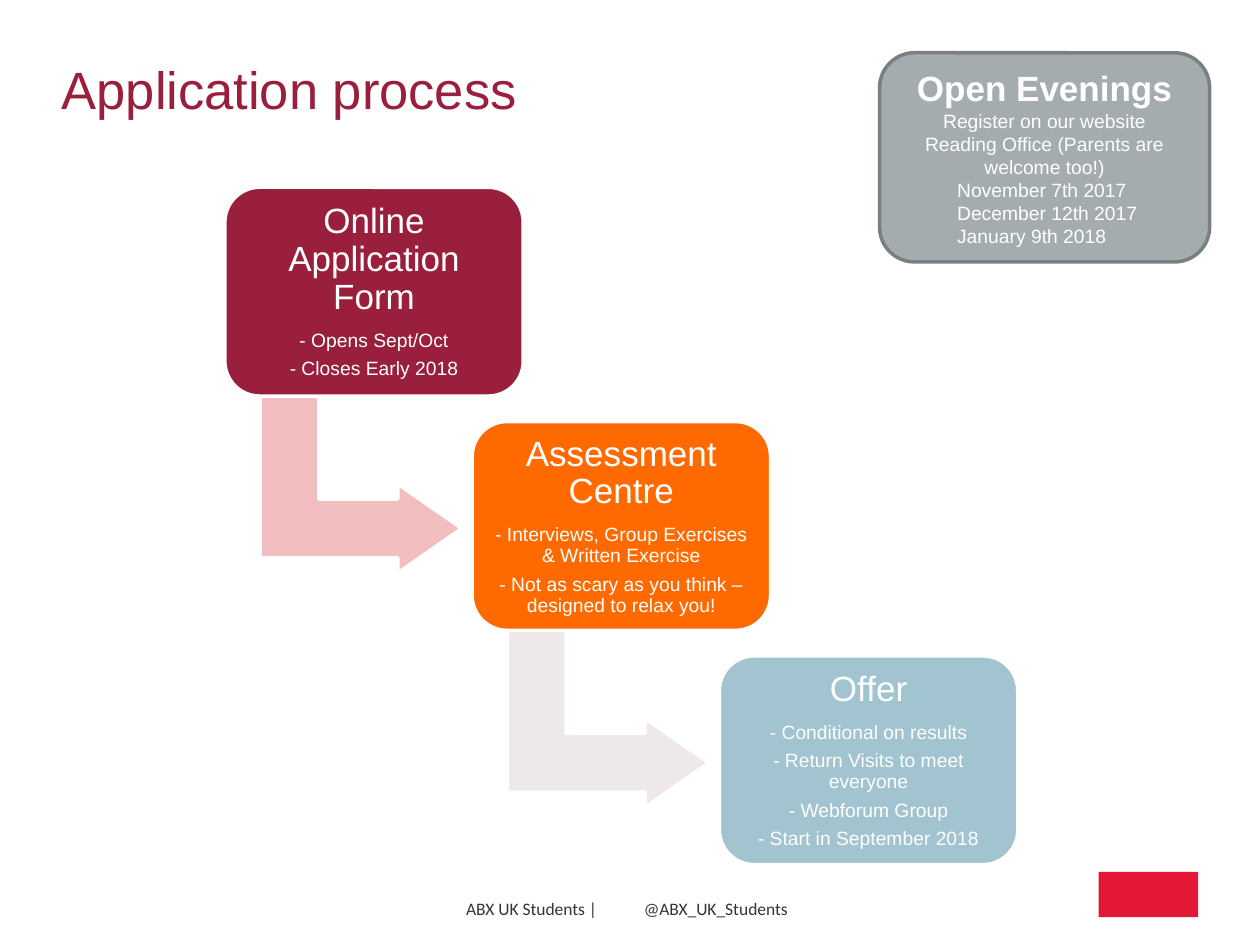
import pptx
import pptx.util
import pptx.dml.color
import pptx.enum.shapes
import pptx.enum.text

Pt = pptx.util.Pt
RGBColor = pptx.dml.color.RGBColor
MSO_SHAPE = pptx.enum.shapes.MSO_SHAPE
PP_ALIGN = pptx.enum.text.PP_ALIGN
MSO_ANCHOR = pptx.enum.text.MSO_ANCHOR

WHITE = RGBColor(0xFF, 0xFF, 0xFF)
BURGUNDY = RGBColor(0x99, 0x1F, 0x3D)
ORANGE = RGBColor(0xFF, 0x6A, 0x00)
PALE_BLUE = RGBColor(0xA1, 0xC4, 0xD0)
PINK = RGBColor(0xF2, 0xBD, 0xBF)
PALE_GREY = RGBColor(0xEF, 0xE8, 0xE9)
GREY = RGBColor(0xA5, 0xAC, 0xB0)
DARK_GREY = RGBColor(0x7A, 0x7F, 0x82)
CHARCOAL = RGBColor(0x36, 0x35, 0x34)
RED = RGBColor(0xE3, 0x18, 0x37)


def add_block(kind, left, top, width, height, fill, line=None):
    block = slide.shapes.add_shape(kind, Pt(left), Pt(top), Pt(width), Pt(height))
    block.shadow.inherit = False
    block.fill.solid()
    block.fill.fore_color.rgb = fill
    if line is None:
        block.line.fill.background()
    else:
        block.line.color.rgb = line
        block.line.width = Pt(2)
    return block


def write_line(frame, index, text, size, color, font="Arial", align=PP_ALIGN.LEFT, bold=False):
    paragraph = frame.paragraphs[0] if index == 0 else frame.add_paragraph()
    paragraph.alignment = align
    run = paragraph.add_run()
    run.text = text
    run.font.name = font
    run.font.size = Pt(size)
    run.font.bold = bold
    run.font.color.rgb = color
    return paragraph


presentation = pptx.Presentation()
presentation.slide_width = Pt(720)
presentation.slide_height = Pt(540)
slide = presentation.slides.add_slide(presentation.slide_layouts[5])

title = slide.shapes.title
title.left, title.top, title.width, title.height = Pt(35.3), Pt(14.4), Pt(648.7), Pt(72.7)
heading = title.text_frame
heading.auto_size = pptx.enum.text.MSO_AUTO_SIZE.NONE
heading.vertical_anchor = MSO_ANCHOR.MIDDLE
heading.margin_left = heading.margin_right = heading.margin_top = heading.margin_bottom = 0
write_line(heading, 0, "Application process", 30, BURGUNDY)

add_block(MSO_SHAPE.RECTANGLE, 627.8, 498.2, 56.9, 25.9, RED)

steps = [
    (BURGUNDY, PINK, "Online Application Form",
     ["- Opens Sept/Oct", "- Closes Early 2018"]),
    (ORANGE, PALE_GREY, "Assessment Centre",
     ["- Interviews, Group Exercises & Written Exercise",
      "- Not as scary as you think – designed to relax you!"]),
    (PALE_BLUE, None, "Offer",
     ["- Conditional on results", "- Return Visits to meet everyone",
      "- Webforum Group", "- Start in September 2018"]),
]
for number, (step_color, arrow_color, step_name, details) in enumerate(steps):
    left = 128.5 + 141.3 * number
    top = 107 + 133.9 * number
    if arrow_color is not None:
        arrow = add_block(MSO_SHAPE.BENT_UP_ARROW, left + 27, top + 112, 101.5, 115.2,
                          arrow_color, WHITE)
        arrow.rotation = 90
        for position, ratio in enumerate((0.33, 0.25, 0.36)):
            arrow.adjustments[position] = ratio
    step = add_block(MSO_SHAPE.ROUNDED_RECTANGLE, left, top, 170.5, 119.3, step_color, WHITE)
    frame = step.text_frame
    frame.word_wrap = True
    frame.vertical_anchor = MSO_ANCHOR.MIDDLE
    frame.margin_left = frame.margin_right = frame.margin_top = frame.margin_bottom = Pt(6)
    for index, text in enumerate([step_name] + details):
        size = 11 if index else 20
        paragraph = write_line(frame, index, text, size, WHITE, align=PP_ALIGN.CENTER)
        paragraph.line_spacing = 0.9
        paragraph.space_after = Pt(0.4 * size)

for left, width, text in [(266.4, 79.2, "ABX UK Students |"), (367.9, 84.2, "@ABX_UK_Students")]:
    footer = slide.shapes.add_textbox(Pt(left), Pt(513.4), Pt(width), Pt(12.2)).text_frame
    footer.word_wrap = False
    footer.margin_left = footer.margin_right = footer.margin_top = footer.margin_bottom = 0
    write_line(footer, 0, text, 10, CHARCOAL, font="Calibri")

evenings = add_block(MSO_SHAPE.ROUNDED_RECTANGLE, 502.6, 30.2, 188.6, 119.5, GREY, DARK_GREY)
frame = evenings.text_frame
frame.word_wrap = True
frame.vertical_anchor = MSO_ANCHOR.MIDDLE
frame.margin_left = frame.margin_right = Pt(5)
frame.margin_top = frame.margin_bottom = 0
notices = ["Open Evenings", "Register on our website", "Reading Office (Parents are welcome too!)"]
dates = ["November 7th 2017", "December 12th 2017", "January 9th 2018"]
for index, text in enumerate(notices):
    write_line(frame, index, text, 11 if index else 20, WHITE,
               align=PP_ALIGN.CENTER, bold=index == 0)
for index, text in enumerate(dates, len(notices)):
    paragraph = write_line(frame, index, text, 11, WHITE)
    properties = paragraph._p.get_or_add_pPr()
    properties.set("marL", str(Pt(33.5)))
    properties.set("indent", "0")

presentation.save("out.pptx")
